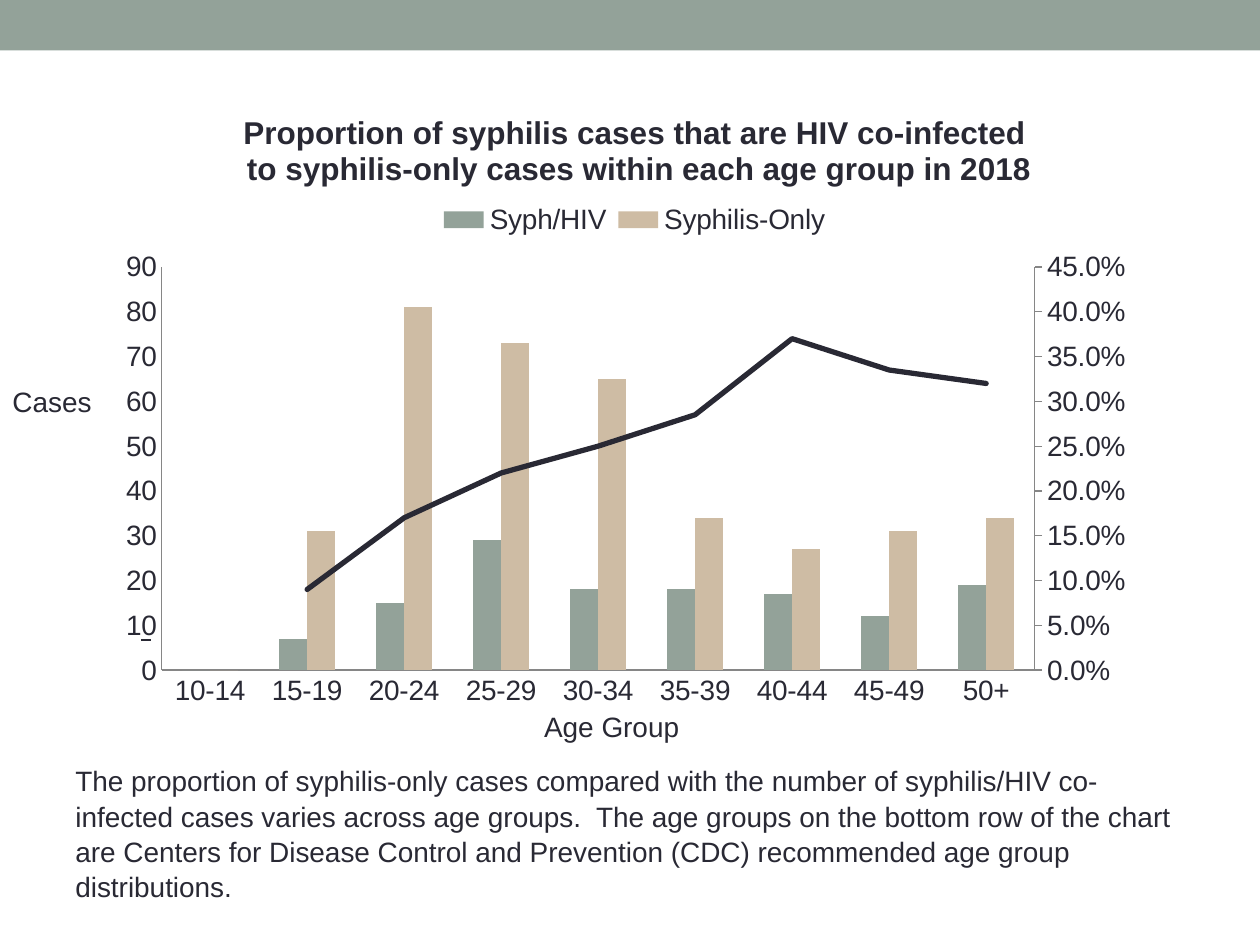
from copy import deepcopy
from typing import NamedTuple

from lxml import etree
from pptx import Presentation
from pptx.chart.axis import CategoryAxis, ValueAxis
from pptx.chart.data import CategoryChartData
from pptx.dml.color import RGBColor
from pptx.enum.chart import XL_CHART_TYPE, XL_LEGEND_POSITION, XL_TICK_MARK
from pptx.enum.shapes import MSO_CONNECTOR, MSO_SHAPE
from pptx.oxml import parse_xml
from pptx.oxml.ns import qn
from pptx.util import Inches, Pt

CLUSTERED = XL_CHART_TYPE.COLUMN_CLUSTERED
LEGEND_TOP = XL_LEGEND_POSITION.TOP
TICK_NONE, TICK_OUT = XL_TICK_MARK.NONE, XL_TICK_MARK.OUTSIDE
STRAIGHT, RECTANGLE = MSO_CONNECTOR.STRAIGHT, MSO_SHAPE.RECTANGLE

FONT = "Arial"
COLORS = {"sage": "93A299", "sand": "CEBCA4", "ink": "292934", "axis": "868686"}
CHART_NS = ('xmlns:c="http://schemas.openxmlformats.org/drawingml/2006/chart" '
            'xmlns:a="http://schemas.openxmlformats.org/drawingml/2006/main"')


class Series(NamedTuple):
    name: str
    values: tuple
    color: str | None


class Label(NamedTuple):
    text: str
    left: float
    top: float
    width: float
    height: float
    line_spacing: float = 1.0


AGE_GROUPS = ["10-14", "15-19", "20-24", "25-29", "30-34", "35-39", "40-44", "45-49", "50+"]
SERIES = [
    Series("Syph/HIV", (0, 7, 15, 29, 18, 18, 17, 12, 19), "sage"),
    Series("Syphilis-Only", (0, 31, 81, 73, 65, 34, 27, 31, 34), "sand"),
    Series("Series 3", (0, 0.18, 0.16, 0.28, 0.22, 0.35, 0.39, 0.28, 0.36), None),
]
TITLE_LINES = ["Proportion of syphilis cases that are HIV co-infected",
               " to syphilis-only cases within each age group in 2018"]
LABELS = [
    Label("The proportion of syphilis-only cases compared with the number of syphilis/HIV "
          "co-infected cases varies across age groups.  The age groups on the bottom row of "
          "the chart are Centers for Disease Control and Prevention (CDC) recommended age "
          "group distributions.", 0.5, 6, 9, 1.08, 1.05),
    Label("Age Group", 4.22, 5.58, 1.29, 0.37),
    Label("Cases", 0, 3, 1.42, 0.37),
]


def rgb(name: str) -> RGBColor:
    return RGBColor.from_string(COLORS[name])


def style_font(font, *, size: float = 16, bold: bool = False) -> None:
    font.name, font.size, font.bold = FONT, Pt(size), bold
    font.color.rgb = rgb("ink")


def add_text(page, text: str, *, left: float, top: float, width: float, height: float,
             line_spacing: float = 1.0) -> None:
    box = page.shapes.add_textbox(Inches(left), Inches(top), Inches(width), Inches(height))
    box.text_frame.word_wrap = True
    para = box.text_frame.paragraphs[0]
    para.line_spacing = line_spacing
    span = para.add_run()
    span.text = text
    style_font(span.font)


def place(element, *, x: float, y: float, width: float = 0, height: float = 0,
          inner: bool = False) -> None:
    """Set a chart part's position as fractions of the chart frame."""
    for old in element.findall(qn("c:layout")):
        element.remove(old)
    target = '<c:layoutTarget val="inner"/>' if inner else ""
    size = f'<c:w val="{width}"/><c:h val="{height}"/>' if width else ""
    layout = parse_xml(
        f'<c:layout {CHART_NS}><c:manualLayout>{target}<c:xMode val="edge"/>'
        f'<c:yMode val="edge"/><c:x val="{x}"/><c:y val="{y}"/>{size}'
        '</c:manualLayout></c:layout>')
    overlay = element.find(qn("c:overlay"))
    element.insert(0 if overlay is None else element.index(overlay), layout)


def style_axis(axis) -> None:
    axis.has_major_gridlines = False
    axis.major_tick_mark = axis.minor_tick_mark = TICK_NONE
    axis.format.line.color.rgb = rgb("axis")
    axis.format.line.width = Pt(0.75)
    style_font(axis.tick_labels.font)


def scale_axis(axis, *, top: float, step: float, number_format: str) -> None:
    axis.minimum_scale, axis.maximum_scale, axis.major_unit = 0, top, step
    axis.tick_labels.number_format = number_format
    axis.tick_labels.number_format_is_linked = False


def move_to_right_axis(plot_area) -> None:
    """Move the last series to a second column group with its own axes."""
    bars = plot_area.find(qn("c:barChart"))
    right_bars = deepcopy(bars)
    bars.remove(bars.findall(qn("c:ser"))[-1])
    for ser in right_bars.findall(qn("c:ser"))[:-1]:
        right_bars.remove(ser)
    bars.addnext(right_bars)

    left_axes = [plot_area.find(qn("c:catAx")), plot_area.find(qn("c:valAx"))]
    category, value = (deepcopy(axis) for axis in left_axes)
    left_axes[1].addnext(value)
    value.addnext(category)
    new_ids = {axis.find(qn("c:axId")).get("val"): str(5001 + number)
               for number, axis in enumerate(left_axes)}
    for part in (right_bars, category, value):
        for node in part.iter(qn("c:axId"), qn("c:crossAx")):
            node.set("val", new_ids[node.get("val")])

    CategoryAxis(category).visible = False
    value.find(qn("c:axPos")).set("val", "r")
    value.find(qn("c:crosses")).set("val", "max")
    right_axis = ValueAxis(value)
    right_axis.major_tick_mark = TICK_OUT
    scale_axis(right_axis, top=0.45, step=0.05, number_format="0.0%")

    # Two-point moving average of the co-infected share
    trend = parse_xml(
        f'<c:trendline {CHART_NS}><c:spPr><a:ln w="{Pt(3)}" cap="rnd"><a:solidFill>'
        f'<a:srgbClr val="{COLORS["ink"]}"/></a:solidFill></a:ln></c:spPr>'
        '<c:trendlineType val="movingAvg"/><c:period val="2"/>'
        '<c:dispRSqr val="0"/><c:dispEq val="0"/></c:trendline>')
    right_bars.find(qn("c:ser")).find(qn("c:cat")).addprevious(trend)


def add_age_chart(page) -> None:
    data = CategoryChartData()
    data.categories = AGE_GROUPS
    for series in SERIES:
        data.add_series(series.name, series.values)
    chart = page.shapes.add_chart(CLUSTERED, Inches(0.87), Inches(0.67), Inches(8.25),
                                  Inches(5), data).chart
    style_font(chart.font, size=10)

    # Title
    frame = chart.chart_title.text_frame
    for number, line in enumerate(TITLE_LINES):
        para = frame.add_paragraph() if number else frame.paragraphs[0]
        span = para.add_run()
        span.text = line
        style_font(span.font, size=18, bold=True)
    place(chart.chart_title._element, x=0.12, y=0.04)

    # Columns and axes
    plot = chart.plots[0]
    plot.gap_width, plot.vary_by_categories = 150, False
    for series, drawn in zip(SERIES, plot.series):
        if series.color:
            drawn.format.fill.solid()
            drawn.format.fill.fore_color.rgb = rgb(series.color)
        else:
            drawn.format.fill.background()
            drawn.format.line.fill.background()
    for axis in (chart.category_axis, chart.value_axis):
        style_axis(axis)
    scale_axis(chart.value_axis, top=90, step=10, number_format="0")
    plot_area = chart._chartSpace.chart.plotArea
    move_to_right_axis(plot_area)
    place(plot_area, x=0.05, y=0.29, width=0.84, height=0.64, inner=True)

    # Legend, without the share series and its trend
    chart.has_legend = True
    legend = chart.legend
    legend.position, legend.include_in_layout = LEGEND_TOP, False
    style_font(legend.font)
    position = legend._element.find(qn("c:legendPos"))
    for index in (3, 2):
        position.addnext(parse_xml(f'<c:legendEntry {CHART_NS}><c:idx val="{index}"/>'
                                   '<c:delete val="1"/></c:legendEntry>'))
    place(legend._element, x=0.31, y=0.18, width=0.39, height=0.07)


def main() -> None:
    deck = Presentation()
    deck.slide_width, deck.slide_height = Inches(10), Inches(7.5)
    page = deck.slides.add_slide(deck.slide_layouts[6])

    # Top band
    band = page.shapes.add_shape(RECTANGLE, 0, 0, Inches(10), Inches(0.4))
    band.shadow.inherit = False
    band.fill.solid()
    band.fill.fore_color.rgb = rgb("sage")
    band.line.fill.background()

    add_age_chart(page)

    # Short mark beside the left axis
    mark = page.shapes.add_connector(STRAIGHT, Inches(1.12), Inches(5.08),
                                     Inches(1.2), Inches(5.08))
    mark.line.color.rgb, mark.line.width = rgb("ink"), Pt(1.5)
    etree.SubElement(mark._element.spPr, qn("a:effectLst"))

    # Axis names and explanation
    for label in LABELS:
        add_text(page, **label._asdict())
    deck.save("out.pptx")


if __name__ == "__main__":
    main()
